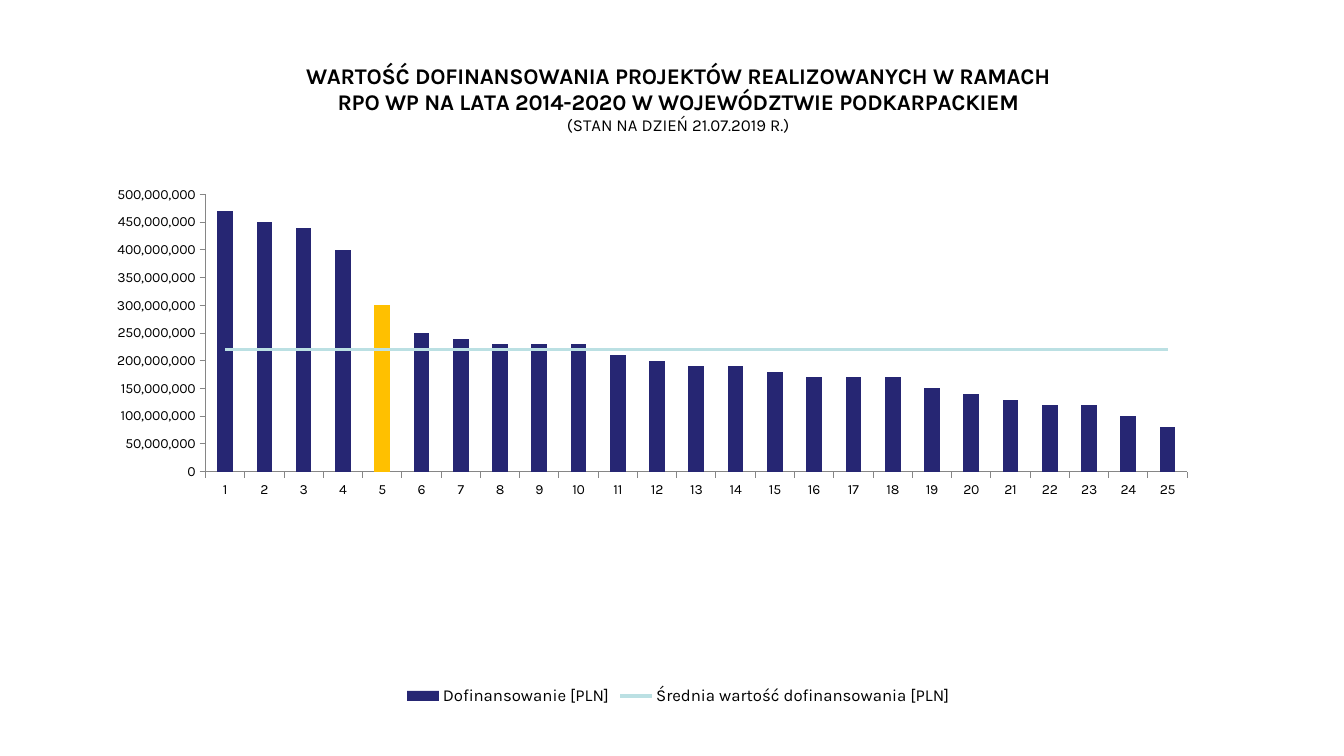
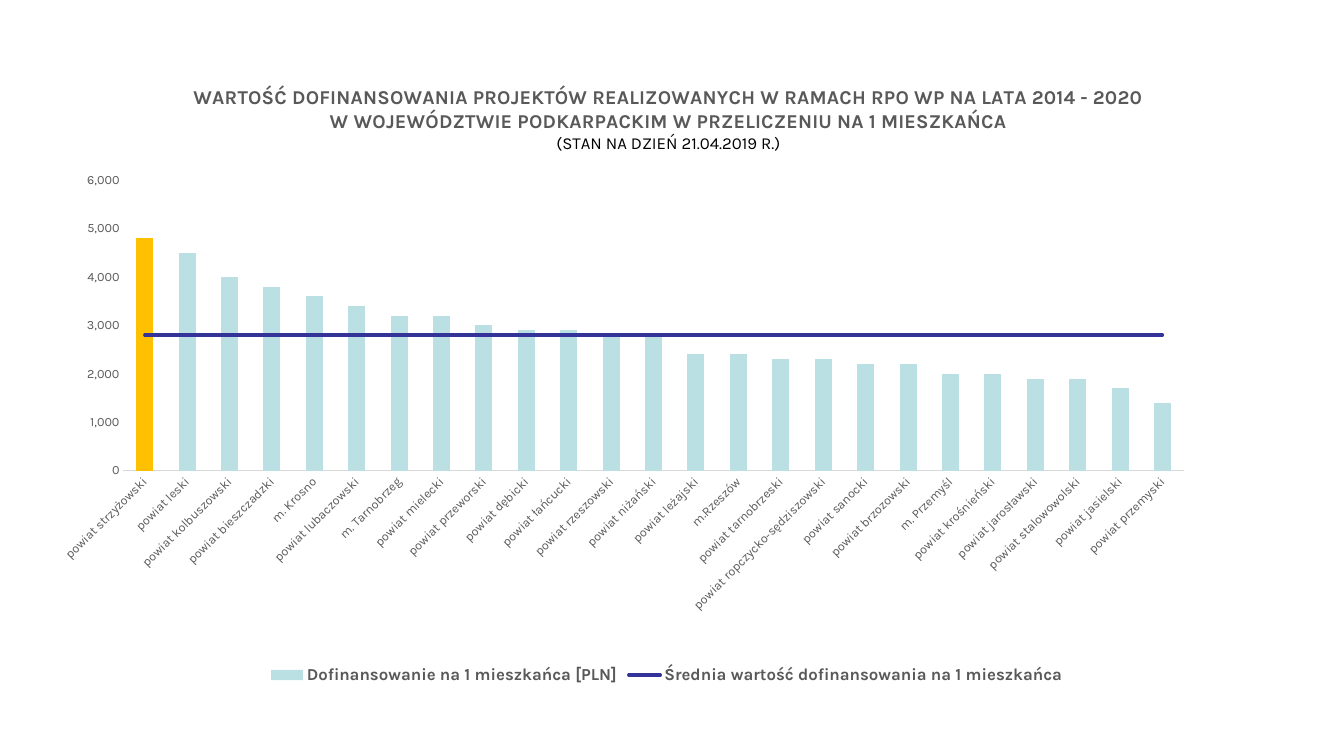
"""Build two slides that chart regional funding against its average."""
from lxml.etree import SubElement
from pptx import Presentation
from pptx.chart.data import CategoryChartData
from pptx.dml.color import RGBColor
from pptx.enum.chart import (XL_CHART_TYPE, XL_LEGEND_POSITION, XL_MARKER_STYLE,
                             XL_TICK_MARK)
from pptx.enum.text import PP_ALIGN
from pptx.oxml import parse_xml
from pptx.oxml.ns import nsdecls, qn
from pptx.util import Pt

EMU_PER_PX = 914400 / 100.8
SLIDE_SIZE = (1344, 756)
FONT = "Karla"
COLORS = {"black": "000000", "text": "595959", "axis": "868686", "pale_axis": "D9D9D9",
          "navy": "262673", "indigo": "333399", "ice": "BBE0E3", "highlight": "FFC000"}
MILLION = 1_000_000

CHARTS = [
    {
        "box": (61, 37, 1235, 673),
        "plot": (0.117, 0.234, 0.795, 0.412),
        "title_at": (0.196, 0.034),
        "title": ["WARTOŚĆ DOFINANSOWANIA PROJEKTÓW REALIZOWANYCH W RAMACH",
                  "RPO WP NA LATA 2014-2020 W WOJEWÓDZTWIE PODKARPACKIEM"],
        "subtitle": "(STAN NA DZIEŃ 21.07.2019 R.)",
        "title_font": {"size": 16, "bold": True, "color": "black"},
        "axis_font": {"size": 10, "bold": False, "color": "black"},
        "legend_font": {"size": 12, "bold": False, "color": "black"},
        "categories": [str(number) for number in range(1, 26)],
        "bars": ("Dofinansowanie [PLN]",
                 [value * MILLION for value in
                  (470, 450, 440, 400, 300, 250, 240, 230, 230, 230, 210, 200, 190,
                   190, 180, 170, 170, 170, 150, 140, 130, 120, 120, 100, 80)]),
        "average": ("Średnia wartość dofinansowania [PLN]", 220 * MILLION),
        "bar_color": "navy", "line_color": "ice", "line_cap": "flat",
        "highlight": 4, "maximum": 500 * MILLION, "step": 50 * MILLION,
        "tick": XL_TICK_MARK.OUTSIDE, "axis_lines": ("axis", "axis"), "rotation": 0,
    },
    {
        "box": (59, 60, 1216, 629),
        "plot": (0.053, 0.191, 0.872, 0.462),
        "title_at": (0.108, 0.035),
        "title": ["WARTOŚĆ DOFINANSOWANIA PROJEKTÓW REALIZOWANYCH W RAMACH "
                  "RPO WP NA LATA 2014 - 2020",
                  "W WOJEWÓDZTWIE PODKARPACKIM W PRZELICZENIU NA 1 MIESZKAŃCA"],
        "subtitle": "(STAN NA DZIEŃ 21.04.2019 R.)",
        "title_font": {"size": 14, "bold": True, "color": "text"},
        "axis_font": {"size": 9, "bold": False, "color": "text"},
        "legend_font": {"size": 12, "bold": True, "color": "text"},
        "categories": [
            "powiat strzyżowski", "powiat leski", "powiat kolbuszowski",
            "powiat bieszczadzki", "m. Krosno", "powiat lubaczowski", "m. Tarnobrzeg",
            "powiat mielecki", "powiat przeworski", "powiat dębicki",
            "powiat łańcucki", "powiat rzeszowski", "powiat niżański",
            "powiat leżajski", "m.Rzeszów", "powiat tarnobrzeski",
            "powiat ropczycko-sędziszowski", "powiat sanocki", "powiat brzozowski",
            "m. Przemyśl", "powiat krośnieński", "powiat jarosławski",
            "powiat stalowowolski", "powiat jasielski", "powiat przemyski"],
        "bars": ("Dofinansowanie na 1 mieszkańca [PLN]",
                 [4800, 4500, 4000, 3800, 3600, 3400, 3200, 3200, 3000, 2900, 2900, 2800,
                  2800, 2400, 2400, 2300, 2300, 2200, 2200, 2000, 2000, 1900, 1900, 1700,
                  1400]),
        "average": ("Średnia wartość dofinansowania na 1 mieszkańca", 2800),
        "bar_color": "ice", "line_color": "indigo", "line_cap": "rnd",
        "highlight": 0, "maximum": 6000, "step": 1000,
        "tick": XL_TICK_MARK.NONE, "axis_lines": ("pale_axis", None), "rotation": -45,
    },
]
SUBTITLE_FONT = {"size": 12, "bold": False, "color": "black"}


def px(length):
    """Turn pixels into EMU."""
    return round(length * EMU_PER_PX)


def rgb(name):
    """Look up a named colour."""
    return RGBColor.from_string(COLORS[name])


def set_attributes(target, values):
    """Set every attribute in a dict of format values."""
    for name, value in values.items():
        setattr(target, name, value)


def style_font(font, style):
    """Apply size, weight and colour in the shared typeface."""
    set_attributes(font, {"name": FONT, "size": Pt(style["size"]), "bold": style["bold"]})
    font.color.rgb = rgb(style["color"])


def set_layout(parent, index, fractions, inner=False):
    """Give a chart part a manual layout in fractions of the chart."""
    for old_layout in parent.findall(qn("c:layout")):
        parent.remove(old_layout)
    layout = parse_xml(f"<c:layout {nsdecls('c')}><c:manualLayout/></c:layout>")
    entries = [("layoutTarget", "inner")] if inner else []
    entries += [("xMode", "edge"), ("yMode", "edge")]
    entries += zip("xywh", fractions)
    for tag, value in entries:
        SubElement(layout[0], qn(f"c:{tag}")).set("val", str(value))
    parent.insert(index, layout)


def move_average_to_line(chart):
    """Move the second series from the column plot to a line plot."""
    bar_chart = chart.plots[0]._element
    series = bar_chart.findall(qn("c:ser"))[1]
    for invert in series.findall(qn("c:invertIfNegative")):
        series.remove(invert)
    line_chart = parse_xml(
        f"<c:lineChart {nsdecls('c')}><c:grouping val='standard'/>"
        "<c:varyColors val='0'/><c:marker val='1'/></c:lineChart>")
    line_chart.insert(2, series)
    for axis_id in bar_chart.findall(qn("c:axId")):
        SubElement(line_chart, qn("c:axId")).set("val", axis_id.get("val"))
    bar_chart.addnext(line_chart)


def style_series(chart, content):
    """Colour the columns, the highlighted column and the average line."""
    columns, line = chart.plots
    set_attributes(columns, {"gap_width": 150, "vary_by_categories": False})
    line.vary_by_categories = False
    bars, average = columns.series[0], line.series[0]
    for part, color in ((bars, content["bar_color"]),
                        (bars.points[content["highlight"]], "highlight")):
        part.format.fill.solid()
        part.format.fill.fore_color.rgb = rgb(color)
    average.smooth = False
    average.marker.style = XL_MARKER_STYLE.NONE
    average.format.line.width = Pt(2.25)
    average.format.line.color.rgb = rgb(content["line_color"])
    average._element.find(f"{qn('c:spPr')}/{qn('a:ln')}").set("cap", content["line_cap"])


def style_axes(chart, content):
    """Set scale, ticks, labels and lines of both axes."""
    axes = (chart.category_axis, chart.value_axis)
    for axis, color in zip(axes, content["axis_lines"]):
        set_attributes(axis, {"has_major_gridlines": False, "has_title": False,
                              "major_tick_mark": content["tick"],
                              "minor_tick_mark": XL_TICK_MARK.NONE})
        style_font(axis.tick_labels.font, content["axis_font"])
        if color:
            axis.format.line.width = Pt(0.75)
            axis.format.line.color.rgb = rgb(color)
        else:
            axis.format.line.fill.background()
    set_attributes(axes[1], {"minimum_scale": 0, "maximum_scale": content["maximum"],
                             "major_unit": content["step"]})
    set_attributes(axes[1].tick_labels,
                   {"number_format": "#,##0", "number_format_is_linked": False})
    body = axes[0]._element.find(f"{qn('c:txPr')}/{qn('a:bodyPr')}")
    body.set("rot", str(content["rotation"] * 60000))


def add_title(chart, content):
    """Write the centred title lines and the date line."""
    chart.has_title = True
    frame = chart.chart_title.text_frame
    lines = [(text, content["title_font"]) for text in content["title"]]
    lines.append((content["subtitle"], SUBTITLE_FONT))
    for index, (text, style) in enumerate(lines):
        paragraph = frame.add_paragraph() if index else frame.paragraphs[0]
        paragraph.alignment = PP_ALIGN.CENTER
        style_font(paragraph.font, style)
        run = paragraph.add_run()
        run.text = text
        style_font(run.font, style)
    title = chart.chart_title._element
    set_layout(title, 1, content["title_at"])
    title.find(qn("c:overlay")).set("val", "1")


def add_funding_chart(slide, content):
    """Add one column chart with its average line."""
    data = CategoryChartData(number_format="#,##0")
    data.categories = content["categories"]
    data.add_series(*content["bars"])
    name, value = content["average"]
    data.add_series(name, [value] * len(content["categories"]))
    chart = slide.shapes.add_chart(XL_CHART_TYPE.COLUMN_CLUSTERED,
                                   *map(px, content["box"]), data).chart
    style_font(chart.font, content["axis_font"])
    move_average_to_line(chart)
    style_series(chart, content)
    style_axes(chart, content)
    add_title(chart, content)
    chart.has_legend = True
    set_attributes(chart.legend, {"position": XL_LEGEND_POSITION.BOTTOM,
                                  "include_in_layout": False})
    style_font(chart.legend.font, content["legend_font"])
    plot_area = chart.plots[0]._element.getparent()
    set_layout(plot_area, 0, content["plot"], inner=True)


def main():
    """Create the presentation and save it."""
    presentation = Presentation()
    width, height = map(px, SLIDE_SIZE)
    set_attributes(presentation, {"slide_width": width, "slide_height": height})
    for content in CHARTS:
        slide = presentation.slides.add_slide(presentation.slide_layouts[6])
        add_funding_chart(slide, content)
    presentation.save("out.pptx")


if __name__ == "__main__":
    main()
